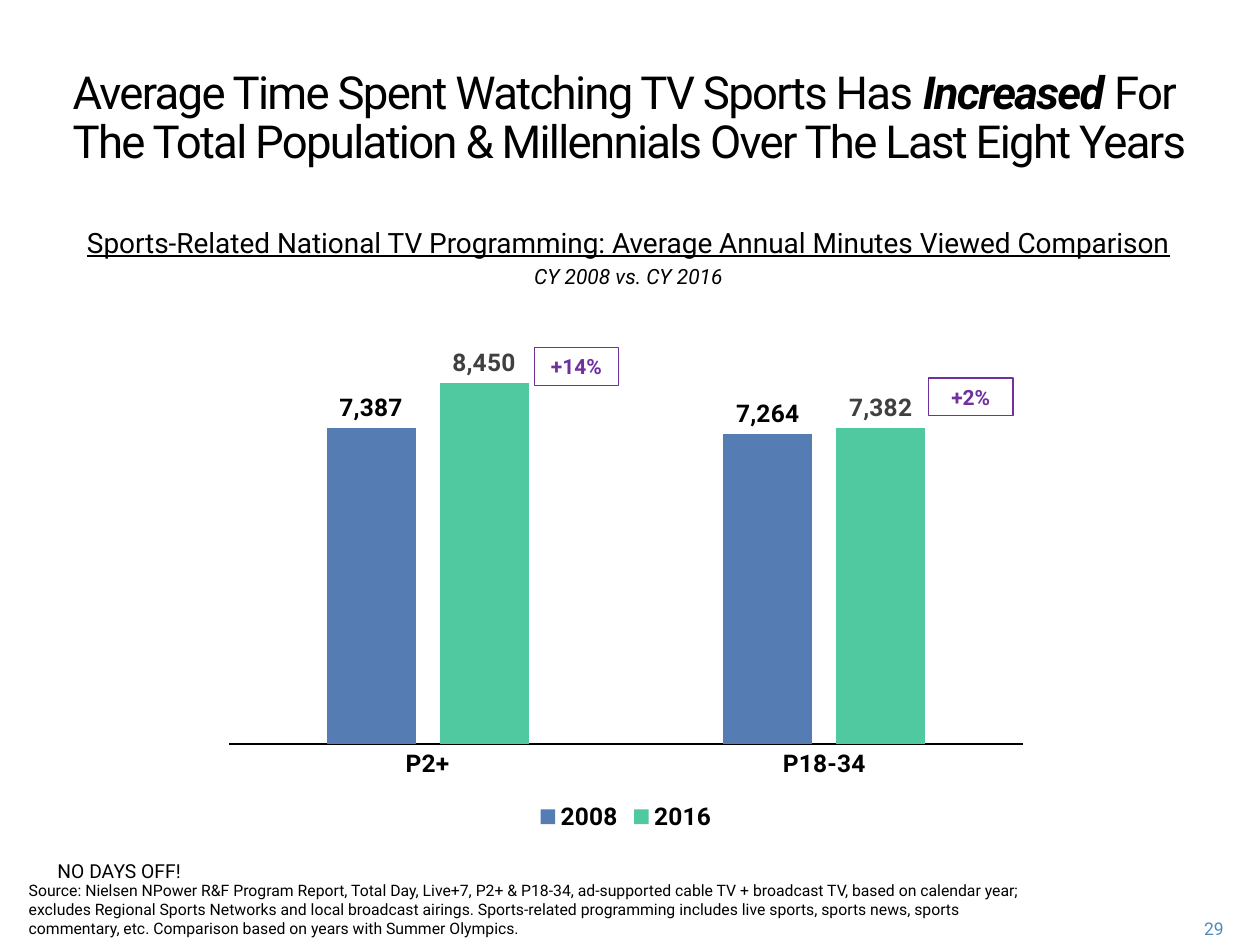
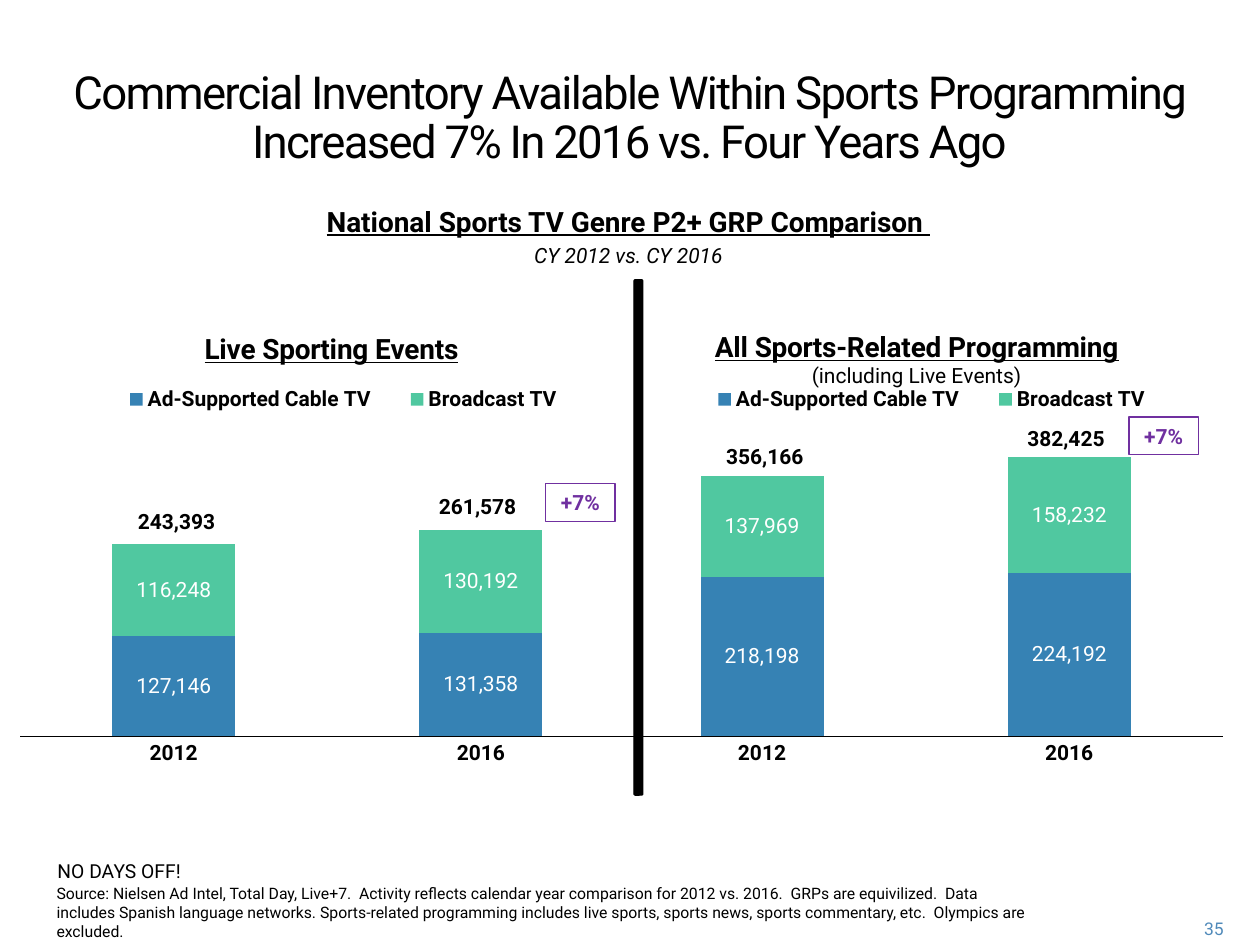
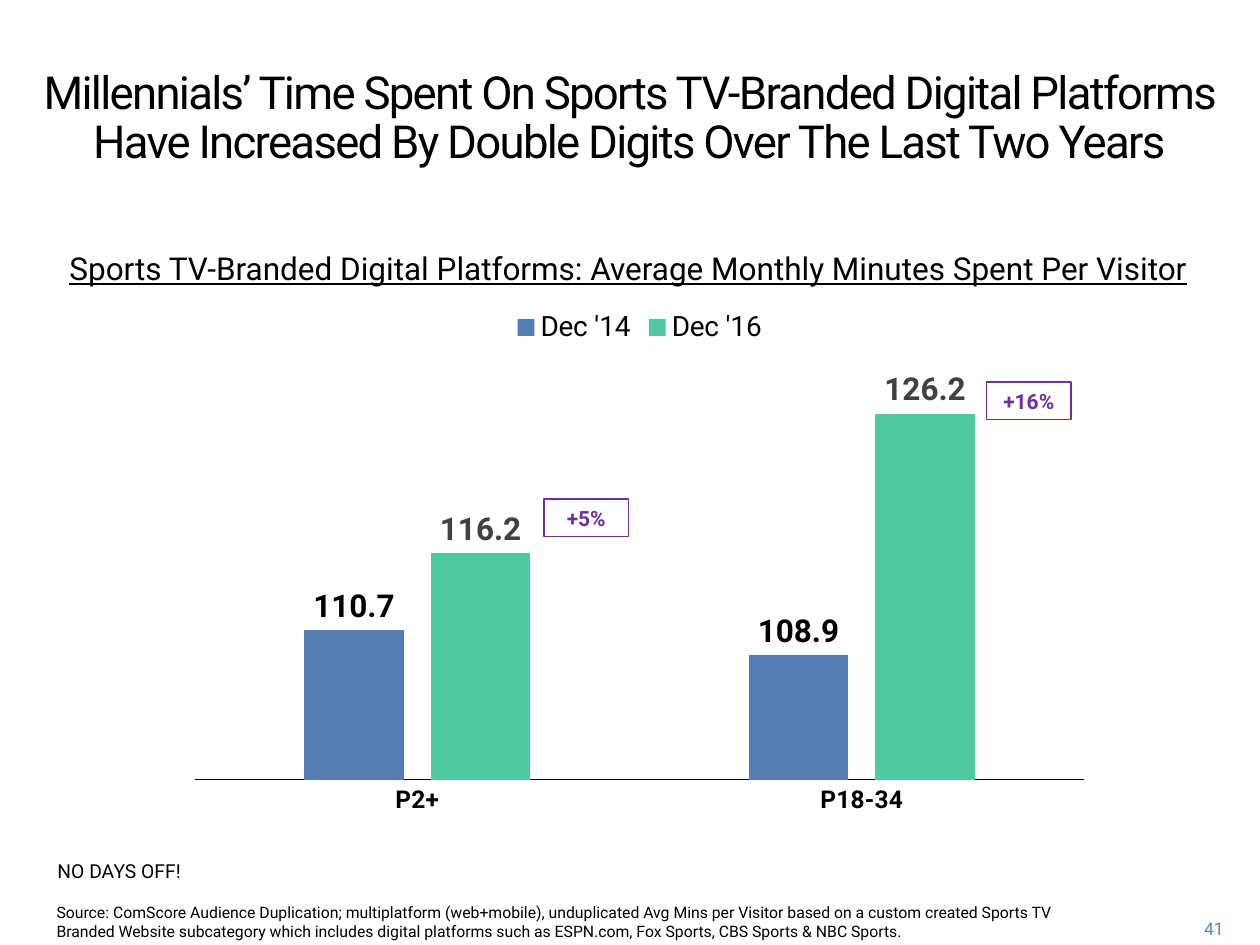
from pptx import Presentation
from pptx import util as u
from pptx.chart.data import CategoryChartData
from pptx.dml.color import RGBColor
from pptx.enum import chart as ch, shapes, text
from pptx.oxml import parse_xml
from pptx.oxml.ns import nsdecls, qn

BLACK, WHITE, GREY = "000000", "FFFFFF", "404040"
PURPLE, PAGE_BLUE = "7030A0", "508ABA"
BLUE, DEEP_BLUE, GREEN = "567CB4", "3682B4", "50C8A0"
CENTER, RIGHT = text.PP_ALIGN.CENTER, text.PP_ALIGN.RIGHT
TOP, BOTTOM = ch.XL_LEGEND_POSITION.TOP, ch.XL_LEGEND_POSITION.BOTTOM


def rgb(value):
    return RGBColor.from_string(value)


def set_font(font, size, color=BLACK, bold=False, italic=False, underline=False):
    font.name, font.size = "Roboto", u.Pt(size)
    font.bold, font.italic, font.underline = bold, italic, underline
    font.color.rgb = rgb(color)


def place(parent, index, x, y, w=None, h=None, inner=False):
    """Give a chart part a manual layout, in fractions of the chart."""
    for old in parent.findall(qn("c:layout")):
        parent.remove(old)
    parts = [("layoutTarget", "inner")] if inner else []
    parts += [("xMode", "edge"), ("yMode", "edge"), ("x", x), ("y", y)]
    if w:
        parts += [("w", w), ("h", h)]
    body = "".join(f'<c:{tag} val="{val}"/>' for tag, val in parts)
    parent.insert(index, parse_xml(
        f'<c:layout {nsdecls("c")}><c:manualLayout>{body}</c:manualLayout></c:layout>'))


class Deck:
    def __init__(self):
        self.prs = Presentation()
        self.prs.slide_width, self.prs.slide_height = u.Cm(25.4), u.Cm(19.05)
        self.s = None

    def slide(self, title, page):
        """Start a slide with its title, slogan and page number."""
        self.s = self.prs.slides.add_slide(self.prs.slide_layouts[6])
        self.title(title)
        self.box(0.91, 17.2, 4.78, 1.19, [("NO DAYS OFF!", dict(size=11))])
        self.box(23.37, 18.39, 1.55, 0.64,
                 [(page, dict(size=10, color=PAGE_BLUE))], RIGHT)

    def title(self, runs):
        tf = self.box(0.46, 1.27, 24.46, 1.73, [])
        p = tf.paragraphs[0]
        p.alignment, p.line_spacing = CENTER, u.Pt(28)
        for words, emphasis in runs:
            for i, line in enumerate(words.split("\n")):
                if i:
                    p.add_line_break()
                r = p.add_run()
                r.text = line
                set_font(r.font, 26, bold=emphasis, italic=emphasis)
                r.font._element.set("spc", "-100")

    def box(self, x, y, w, h, lines, align=None):
        tf = self.s.shapes.add_textbox(*map(u.Cm, (x, y, w, h))).text_frame
        tf.word_wrap = True
        self.set_lines(tf, lines, align)
        return tf

    def set_lines(self, tf, lines, align=None, gap=2.5):
        for i, (words, style) in enumerate(lines):
            p = tf.add_paragraph() if i else tf.paragraphs[0]
            p.text, p.alignment = words, align
            if i:
                p.space_before = u.Pt(gap)
            set_font(p.font, **style)

    def subtitle(self, y, words, size=16, bold=False, period=None):
        lines = [(words, dict(size=size, bold=bold, underline=True))]
        if period:
            lines.append((period, dict(size=12, italic=True)))
        self.box(0.44, y, 24.46, 1.02, lines, CENTER)

    def source(self, x, y, w, words):
        self.box(x, y, w, 0.9, [(words, dict(size=9))])

    def total(self, x, y, words):
        self.box(x, y, 2.4, 0.76, [(words, dict(size=12, bold=True))], CENTER)

    def shape(self, kind, x, y, w, h, line, fill=None):
        sp = self.s.shapes.add_shape(kind, *map(u.Cm, (x, y, w, h)))
        sp.shadow.inherit = False
        sp.line.color.rgb, sp.line.width = rgb(line), u.Pt(0.75)
        if fill:
            sp.fill.solid()
            sp.fill.fore_color.rgb = rgb(fill)
        else:
            sp.fill.background()
        return sp

    def change(self, x, y, words, w=1.7):
        """Outlined box with the growth rate."""
        sp = self.shape(shapes.MSO_SHAPE.RECTANGLE, x, y, w, 0.76, PURPLE)
        self.set_lines(sp.text_frame, [(words, dict(size=12, color=PURPLE, bold=True))], CENTER)

    def columns(self, at, cats, series, plot_at, axis_size, legend, legend_font,
                label_size, low=0, high=None, fmt="#,##0", stacked=False):
        """Column chart; series holds (name, values, fill, label colour)."""
        data = CategoryChartData(number_format=fmt)
        data.categories = cats
        for name, values, _, _ in series:
            data.add_series(name, values)
        types = ch.XL_CHART_TYPE
        kind = types.COLUMN_STACKED if stacked else types.COLUMN_CLUSTERED
        chart = self.s.shapes.add_chart(kind, *map(u.Cm, at), data).chart
        set_font(chart.font, 10)
        chart.has_title = False
        root = chart._chartSpace
        root.find(qn("c:chart")).addnext(parse_xml(
            f'<c:spPr {nsdecls("c", "a")}><a:noFill/><a:ln><a:noFill/></a:ln></c:spPr>'))
        place(root.find(".//" + qn("c:plotArea")), 0, *plot_at, inner=True)

        # Axes and legend
        axis = chart.category_axis
        axis.major_tick_mark = ch.XL_TICK_MARK.NONE
        axis.format.line.color.rgb, axis.format.line.width = rgb(BLACK), u.Pt(0.75)
        set_font(axis.tick_labels.font, axis_size, bold=True)
        values = chart.value_axis
        values.visible = values.has_major_gridlines = False
        values.minimum_scale, values.maximum_scale = low, high
        chart.has_legend = True
        chart.legend.position, chart.legend.include_in_layout = legend, False
        set_font(chart.legend.font, **legend_font)

        # Columns and their labels
        plot = chart.plots[0]
        plot.vary_by_categories = False
        plot.gap_width, plot.overlap = (150, 100) if stacked else (219, -27)
        spots = ch.XL_LABEL_POSITION
        for ser, (_, _, fill, label_color) in zip(plot.series, series):
            ser.format.fill.solid()
            ser.format.fill.fore_color.rgb = rgb(fill)
            labels = ser.data_labels
            labels.show_value = True
            labels.number_format, labels.number_format_is_linked = fmt, False
            labels.position = spots.CENTER if stacked else spots.OUTSIDE_END
            set_font(labels.font, label_size, label_color, bold=not stacked)
        return chart

    def genre(self, x, heading, heading_x, cable, broadcast, plot_y):
        """Stacked chart of one sports genre."""
        chart = self.columns(
            (x, 6.2, 12.9, 9.5), ["2012", "2016"],
            [("Ad-Supported Cable TV", cable, DEEP_BLUE, WHITE),
             ("Broadcast TV", broadcast, GREEN, WHITE)],
            (0.02, plot_y, 0.96, round(0.91 - plot_y, 2)), 12, TOP,
            dict(size=12, bold=True), 12, high=400000, stacked=True)
        chart.has_title = True
        styles = [dict(size=16, bold=True, underline=True), dict(size=12)]
        self.set_lines(chart.chart_title.text_frame, list(zip(heading, styles)), gap=0)
        place(chart.chart_title._element, 1, heading_x, 0.04)
        place(chart.legend._element, 1, 0.14, 0.15, 0.77, 0.09)


def main():
    d = Deck()
    groups = ["P2+", "P18-34"]

    # Minutes viewed on TV
    d.slide([("Average Time Spent Watching TV Sports Has ", False), ("Increased", True),
             (" For \nThe Total Population & Millennials Over The Last Eight Years", False)], "29")
    d.columns((4.29, 7.01, 16.66, 9.86), groups,
              [("2008", (7387, 7264), BLUE, BLACK), ("2016", (8450, 7382), GREEN, GREY)],
              (0.02, 0.02, 0.96, 0.79), 14, BOTTOM, dict(size=14, bold=True), 14, high=9000)
    d.subtitle(4.42, "Sports-Related National TV Programming: Average Annual Minutes "
               "Viewed Comparison", period="CY 2008 vs. CY 2016")
    d.source(0.33, 17.63, 20.75,
             "Source: Nielsen NPower R&F Program Report, Total Day, Live+7, P2+ & P18-34, "
             "ad-supported cable TV + broadcast TV, based on calendar year; excludes Regional "
             "Sports Networks and local broadcast airings. Sports-related programming includes "
             "live sports, sports news, sports commentary, etc. Comparison based on years with "
             "Summer Olympics.")
    d.change(10.77, 7.01, "+14%")
    d.change(18.72, 7.62, "+2%")

    # Commercial inventory by genre
    d.slide([("Commercial Inventory Available Within Sports Programming "
              "Increased 7% In 2016 vs. Four Years Ago", False)], "35")
    d.source(0.89, 17.7, 20.07,
             "Source: Nielsen Ad Intel, Total Day, Live+7.  Activity reflects calendar year "
             "comparison for 2012 vs. 2016.  GRPs are equivilized.  Data includes Spanish "
             "language networks. Sports-related programming includes live sports, sports news, "
             "sports commentary, etc.  Olympics are excluded.")
    d.genre(12.01, ["All Sports-Related Programming", "(including Live Events)"], 0.18,
            (218198, 224192), (137969, 158232), 0.29)
    d.genre(0.15, ["Live Sporting Events"], 0.3, (127146, 131358), (116248, 130192), 0.24)
    for x, y, words in [(14.22, 8.81, "356,166"), (20.29, 8.46, "382,425"),
                        (2.36, 10.13, "243,393"), (8.43, 9.83, "261,578")]:
        d.total(x, y, words)
    d.change(22.76, 8.41, "+7%", 1.4)
    d.change(11, 9.75, "+7%", 1.4)
    d.shape(shapes.MSO_SHAPE.ROUNDED_RECTANGLE, 12.78, 5.64, 0.18, 10.39, BLACK, BLACK)
    d.subtitle(3.99, "National Sports TV Genre P2+ GRP Comparison ", bold=True,
               period="CY 2012 vs. CY 2016")

    # Minutes spent on digital platforms
    d.slide([("Millennials’ Time Spent On Sports TV-Branded Digital Platforms "
              "Have Increased By Double Digits Over The Last Two Years", False)], "41")
    d.source(0.89, 18.08, 20.57,
             "Source: ComScore Audience Duplication; multiplatform (web+mobile), unduplicated "
             "Avg Mins per Visitor based on a custom created Sports TV Branded Website "
             "subcategory which includes digital platforms such as ESPN.com, Fox Sports, "
             "CBS Sports & NBC Sports.")
    d.columns((3.56, 5.99, 18.67, 10.69), groups,
              [("Dec '14", (110.7, 108.9), BLUE, BLACK),
               ("Dec '16", (116.2, 126.2), GREEN, GREY)],
              (0.02, 0.12, 0.96, 0.79), 14, TOP, dict(size=16), 18,
              low=100, high=130, fmt="0.0")
    d.subtitle(4.9, "Sports TV-Branded Digital Platforms: Average Monthly Minutes Spent "
               "Per Visitor", size=18)
    d.change(10.97, 10.06, "+5%")
    d.change(19.89, 7.7, "+16%")

    d.prs.save("out.pptx")


if __name__ == "__main__":
    main()
